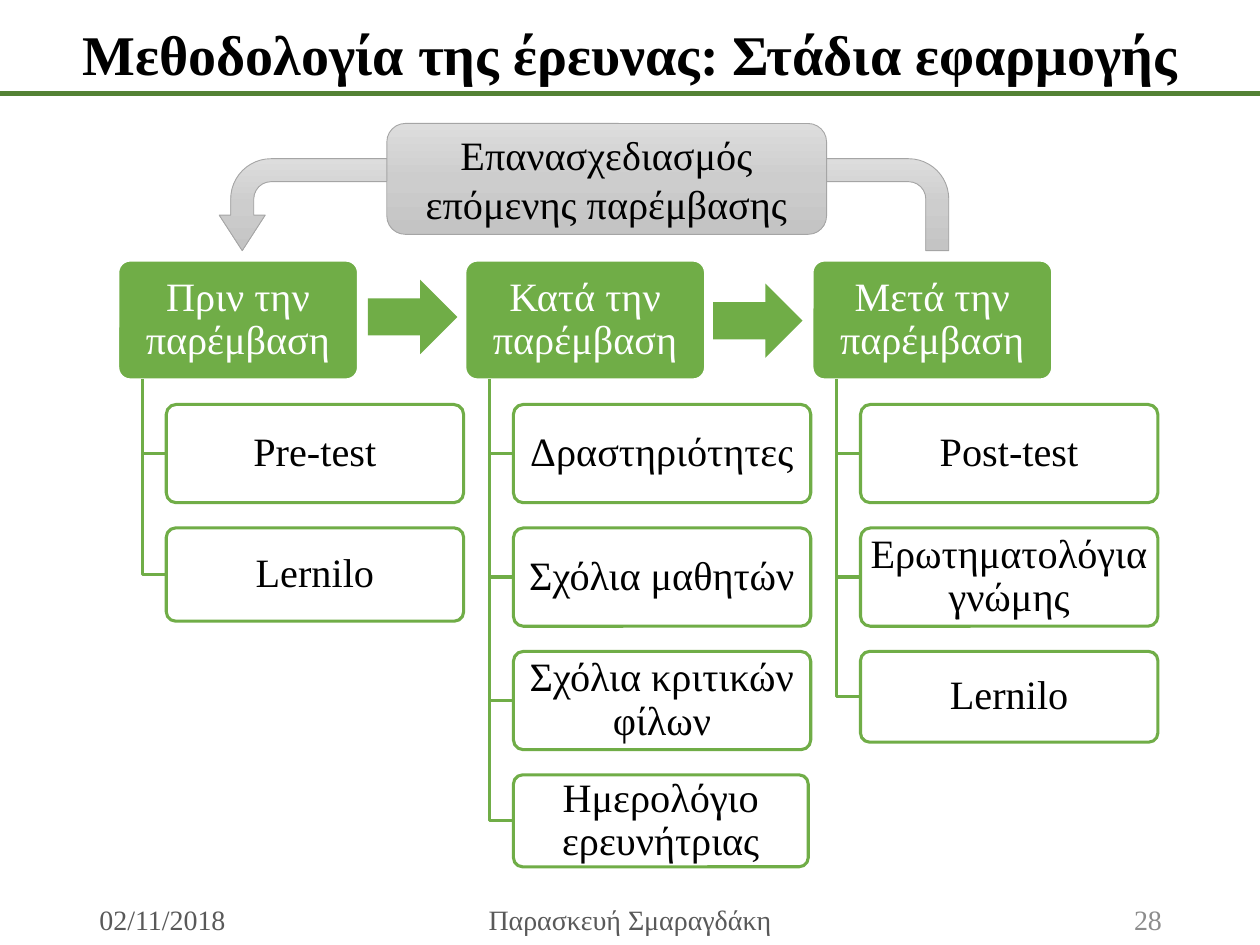
import copy

import pptx
import pptx.dml.color
import pptx.enum.shapes
import pptx.enum.text
import pptx.oxml.ns
import pptx.util
from pptx.util import Inches

RGBColor = pptx.dml.color.RGBColor
MSO_SHAPE = pptx.enum.shapes.MSO_SHAPE
PP_ALIGN = pptx.enum.text.PP_ALIGN

GREEN = RGBColor(0x70, 0xAD, 0x47)
DARK_GREEN = RGBColor(0x54, 0x82, 0x35)
WHITE = RGBColor(0xFF, 0xFF, 0xFF)
BLACK = RGBColor(0x00, 0x00, 0x00)
GREY_LINE = RGBColor(0xA5, 0xA5, 0xA5)
GREY_TOP = RGBColor(0xDD, 0xDD, 0xDD)
GREY_MIDDLE = RGBColor(0xCD, 0xCD, 0xCD)
GREY_BOTTOM = RGBColor(0xC4, 0xC4, 0xC4)
FOOTER_DARK = RGBColor(0x59, 0x59, 0x59)
FOOTER_LIGHT = RGBColor(0x8C, 0x8C, 0x8C)

prs = pptx.Presentation()
prs.slide_width, prs.slide_height = Inches(10), Inches(7.5)
slide = prs.slides.add_slide(prs.slide_layouts[6])
shapes = slide.shapes


def add_block(kind, box, fill, line, line_width, adjustments=()):
    """Add a preset shape; without a fill colour it gets the grey gradient."""
    block = shapes.add_shape(kind, *[Inches(v) for v in box])
    block.shadow.inherit = False
    for i, value in enumerate(adjustments):
        block.adjustments[i] = value
    if fill is None:
        block.fill.gradient()
        block.fill.gradient_angle = 270
        top, bottom = block.fill.gradient_stops
        top.color.rgb, bottom.color.rgb = GREY_TOP, GREY_BOTTOM
        first = block._element.spPr.find(".//" + pptx.oxml.ns.qn("a:gs"))
        middle = copy.deepcopy(first)
        middle.set("pos", "50000")
        first.addnext(middle)
        block.fill.gradient_stops[1].color.rgb = GREY_MIDDLE
    else:
        block.fill.solid()
        block.fill.fore_color.rgb = fill
    if line is None:
        block.line.fill.background()
    else:
        block.line.color.rgb = line
        block.line.width = pptx.util.Pt(line_width)
    return block


def write(shape, text, size, color, align=PP_ALIGN.CENTER, spacing=None, insets=None):
    frame = shape.text_frame
    frame.text = text
    frame.word_wrap = True
    frame.vertical_anchor = pptx.enum.text.MSO_ANCHOR.MIDDLE
    if insets:
        frame.margin_left = frame.margin_right = Inches(insets[0])
        frame.margin_top = frame.margin_bottom = Inches(insets[1])
    paragraph = frame.paragraphs[0]
    paragraph.alignment = align
    paragraph.line_spacing = spacing
    font = paragraph.runs[0].font
    font.name, font.size = "Times New Roman", pptx.util.Pt(size)
    font.color.rgb = color
    return frame


# Feedback arrow from the last stage back to the first
feedback = add_block(MSO_SHAPE.U_TURN_ARROW, (1.74, 1.26, 5.79, 0.73), None,
                     GREY_LINE, 0.5, (0.25, 0.25, 0.386, 0.438, 1))
feedback._element.spPr.xfrm.set("flipH", "1")

# Stages with their tools: (text, box width, box height)
stages = [
    ("Πριν την παρέμβαση", [("Pre-test", 2.36, 0.78), ("Lernilo", 2.36, 0.74)]),
    ("Κατά την παρέμβαση", [("Δραστηριότητες", 2.36, 0.78),
                            ("Σχόλια μαθητών", 2.36, 0.78),
                            ("Σχόλια κριτικών φίλων", 2.36, 0.78),
                            ("Ημερολόγιο ερευνήτριας", 2.34, 0.73)]),
    ("Μετά την παρέμβαση", [("Post-test", 2.36, 0.78),
                            ("Ερωτηματολόγια γνώμης", 2.36, 0.78),
                            ("Lernilo", 2.36, 0.72)]),
]
STAGE_TOP, STAGE_HEIGHT = 2.07, 0.94
for column, (stage, tools) in enumerate(stages):
    left = 0.94 + column * 2.755
    header = add_block(MSO_SHAPE.ROUNDED_RECTANGLE, (left, STAGE_TOP, 1.9, STAGE_HEIGHT),
                       GREEN, WHITE, 1, [0.1])
    write(header, stage, 23, WHITE, spacing=0.9, insets=(0.05, 0.03))
    trunk, tool_left = left + 0.19, left + 0.38
    for row, (tool, width, height) in enumerate(tools):
        top = 3.21 + row * 0.98
        middle = Inches(top + height / 2)
        builder = shapes.build_freeform(Inches(trunk), Inches(STAGE_TOP + STAGE_HEIGHT))
        builder.add_line_segments([(Inches(trunk), middle), (Inches(tool_left), middle)],
                                  close=False)
        branch = builder.convert_to_shape()
        branch.shadow.inherit = False
        branch.fill.background()
        branch.line.color.rgb = GREEN
        branch.line.width = pptx.util.Pt(1.75)
        tool_box = add_block(MSO_SHAPE.ROUNDED_RECTANGLE, (tool_left, top, width, height),
                             WHITE, GREEN, 1.75, [0.1])
        write(tool_box, tool, 23, BLACK, spacing=0.9, insets=(0.02, 0.03))

# Arrows between stages
for left, top in [(5.66, 2.25), (2.92, 2.22)]:
    add_block(MSO_SHAPE.RIGHT_ARROW, (left, top, 0.71, 0.59), GREEN, None, 0)

# Redesign box
redesign = add_block(MSO_SHAPE.ROUNDED_RECTANGLE, (3.07, 0.98, 3.49, 0.88), None,
                     GREY_LINE, 0.5)
write(redesign, "Επανασχεδιασμός επόμενης παρέμβασης", 23, BLACK)

# Rule under the title
rule = shapes.add_connector(pptx.enum.shapes.MSO_CONNECTOR.STRAIGHT,
                            Inches(0), Inches(0.74), Inches(10), Inches(0.74))
rule.line.color.rgb = DARK_GREEN
rule.line.width = pptx.util.Pt(3)
rule._element.spPr.append(pptx.oxml.parse_xml(
    "<a:effectLst %s/>" % pptx.oxml.ns.nsdecls("a")))

# Footer
for text, left, width, color, align in [
    ("02/11/2018", 0.69, 2.25, FOOTER_DARK, PP_ALIGN.LEFT),
    ("Παρασκευή Σμαραγδάκη", 3.31, 3.38, FOOTER_DARK, PP_ALIGN.CENTER),
    ("28", 7.07, 2.25, FOOTER_LIGHT, PP_ALIGN.RIGHT),
]:
    footer = shapes.add_textbox(Inches(left), Inches(7.1), Inches(width), Inches(0.4))
    write(footer, text, 16, color, align)

# Title
title = shapes.add_textbox(Inches(0.52), Inches(0.11), Inches(8.97), Inches(0.64))
title_frame = write(title, "Μεθοδολογία της έρευνας: Στάδια εφαρμογής", 32, BLACK)
title_frame.word_wrap = False
title_frame.vertical_anchor = pptx.enum.text.MSO_ANCHOR.TOP
title_frame.auto_size = pptx.enum.text.MSO_AUTO_SIZE.SHAPE_TO_FIT_TEXT
title_frame.paragraphs[0].runs[0].font.bold = True

prs.save("out.pptx")
